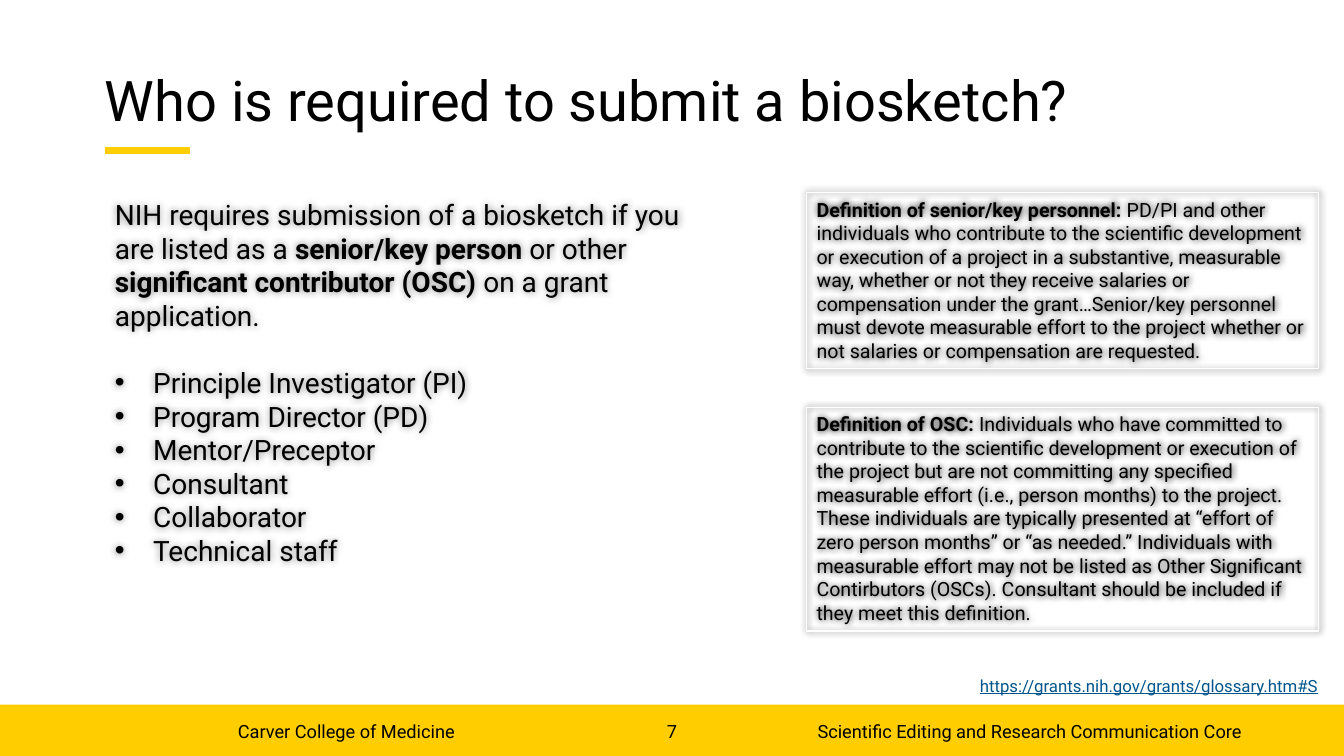
from lxml import etree
from pptx import Presentation
from pptx import util as u
from pptx.dml.color import RGBColor
from pptx.enum import shapes, text
from pptx.oxml import ns

BLACK = RGBColor(0x00, 0x00, 0x00)
WHITE = RGBColor(0xFF, 0xFF, 0xFF)
GOLD = RGBColor(0xFF, 0xCD, 0x00)
BLUE = RGBColor(0x00, 0x55, 0x8C)
LEFT, CENTER, RIGHT = text.PP_ALIGN.LEFT, text.PP_ALIGN.CENTER, text.PP_ALIGN.RIGHT

LEAD = ("NIH requires submission of a biosketch if you are listed as a "
        "**senior/key person **or other **significant contributor (OSC) **"
        "on a grant application.")
ROLES = ["Principle Investigator (PI)", "Program Director (PD)", "Mentor/Preceptor",
         "Consultant", "Collaborator", "Technical staff"]
SENIOR = ("**Definition of senior/key personnel: **PD/PI and other individuals who "
          "contribute to the scientific development or execution of a project in a "
          "substantive, measurable way, whether or not they receive salaries or "
          "compensation under the grant…Senior/key personnel must devote measurable "
          "effort to the project whether or not salaries or compensation are requested.")
OSC = ("**Definition of OSC: **Individuals who have committed to contribute to the "
       "scientific development or execution of the project but are not committing any "
       "specified measurable effort (i.e., person months) to the project. These "
       "individuals are typically presented at “effort of zero person months” or “as "
       "needed.” Individuals with measurable effort may not be listed as Other "
       "Significant Contirbutors (OSCs). Consultant should be included if they meet "
       "this definition.")


class Deck:
    """Holds the type style and the current slide, and draws each kind of element."""

    def __init__(self, font):
        self.font = font
        self.show = Presentation()
        self.show.slide_width, self.show.slide_height = u.Inches(13.33), u.Inches(7.5)
        self.slide = self.show.slides.add_slide(self.show.slide_layouts[6])

    def band(self, box, fill):
        item = self.slide.shapes.add_shape(shapes.MSO_SHAPE.RECTANGLE, *map(u.Inches, box))
        item.shadow.inherit = False
        item.fill.solid()
        item.fill.fore_color.rgb = fill
        item.line.fill.background()

    def rule(self, start, end, color, width):
        item = self.slide.shapes.add_connector(
            shapes.MSO_CONNECTOR.STRAIGHT, *map(u.Inches, start + end))
        item.line.color.rgb = color
        item.line.width = u.Pt(width)
        etree.SubElement(item.element.spPr, ns.qn("a:effectLst"))

    def glow(self, item, blur, alpha):
        item.shadow.inherit = False
        effects = item.element.spPr.find(ns.qn("a:effectLst"))
        shade = etree.SubElement(effects, ns.qn("a:outerShdw"), blurRad=str(u.Pt(blur)),
                                 dist="0", algn="ctr", rotWithShape="0")
        color = etree.SubElement(shade, ns.qn("a:srgbClr"), val=str(BLACK))
        etree.SubElement(color, ns.qn("a:alpha"), val=str(alpha * 1000))

    def phrase(self, para, words, size, color=BLACK, align=LEFT, under=None):
        para.alignment = align
        for spot, part in enumerate(words.split("**")):
            if part:
                run = para.add_run()
                run.text = part
                run.font.name = self.font
                run.font.size = u.Pt(size)
                run.font.color.rgb = color
                run.font.bold = spot % 2 == 1
                run.font.underline = under

    def label(self, box, words, size, inset=True, anchor=text.MSO_ANCHOR.TOP, **style):
        item = self.slide.shapes.add_textbox(*map(u.Inches, box))
        frame = item.text_frame
        frame.word_wrap = True
        frame.vertical_anchor = anchor
        if not inset:
            frame.margin_left = frame.margin_right = 0
            frame.margin_top = frame.margin_bottom = 0
        self.phrase(frame.paragraphs[0], words, size, **style)
        return item

    def bullets(self, frame, items, size, gap):
        for spot, words in enumerate(items):
            para = frame.add_paragraph()
            if spot == 0:
                para.space_before = u.Pt(gap)
            props = para._p.get_or_add_pPr()
            props.set("marL", str(u.Inches(0.38)))
            props.set("indent", str(u.Inches(-0.38)))
            etree.SubElement(props, ns.qn("a:buFont"), typeface="Arial")
            etree.SubElement(props, ns.qn("a:buChar"), char="•")
            self.phrase(para, words, size)

    def card(self, box, words, size):
        item = self.slide.shapes.add_shape(shapes.MSO_SHAPE.RECTANGLE, *map(u.Inches, box))
        item.fill.background()
        item.line.color.rgb = WHITE
        item.line.width = u.Pt(0.75)
        self.glow(item, 5, 91)
        item.text_frame.word_wrap = True
        item.text_frame.vertical_anchor = text.MSO_ANCHOR.TOP
        self.phrase(item.text_frame.paragraphs[0], words, size)


def main():
    deck = Deck("Roboto")
    middle = text.MSO_ANCHOR.MIDDLE

    deck.band((0, 6.99, 13.33, 0.51), GOLD)
    deck.rule((1.04, 1.49), (1.88, 1.49), GOLD, 5)
    deck.label((6.34, 7.15, 0.65, 0.26), "7", 13, inset=False, align=CENTER)
    deck.label((2.36, 7.15, 3.16, 0.35), "Carver College of Medicine", 13, inset=False)

    title = deck.label((1.04, 0.54, 10.3, 0.98), "Who is required to submit a biosketch?",
                       40, inset=False, anchor=middle)
    title.text_frame.paragraphs[0].line_spacing = 0.9

    body = deck.label((1.04, 1.91, 5.82, 3.8), LEAD, 20)
    deck.bullets(body.text_frame, ROLES, 20, 24)
    deck.glow(body, 5, 45)

    for top, height, words in ((1.91, 1.75, SENIOR), (4.04, 2.22, OSC)):
        deck.card((8, top, 5.08, height), words, 14)

    deck.label((9.62, 6.65, 3.71, 0.3), "https://grants.nih.gov/grants/glossary.htm#S",
               12, color=BLUE, under=True)
    deck.label((7.19, 7.05, 5.12, 0.4), "Scientific Editing and Research Communication Core",
               13, inset=False, anchor=middle, align=RIGHT)
    deck.show.save("out.pptx")


if __name__ == "__main__":
    main()
